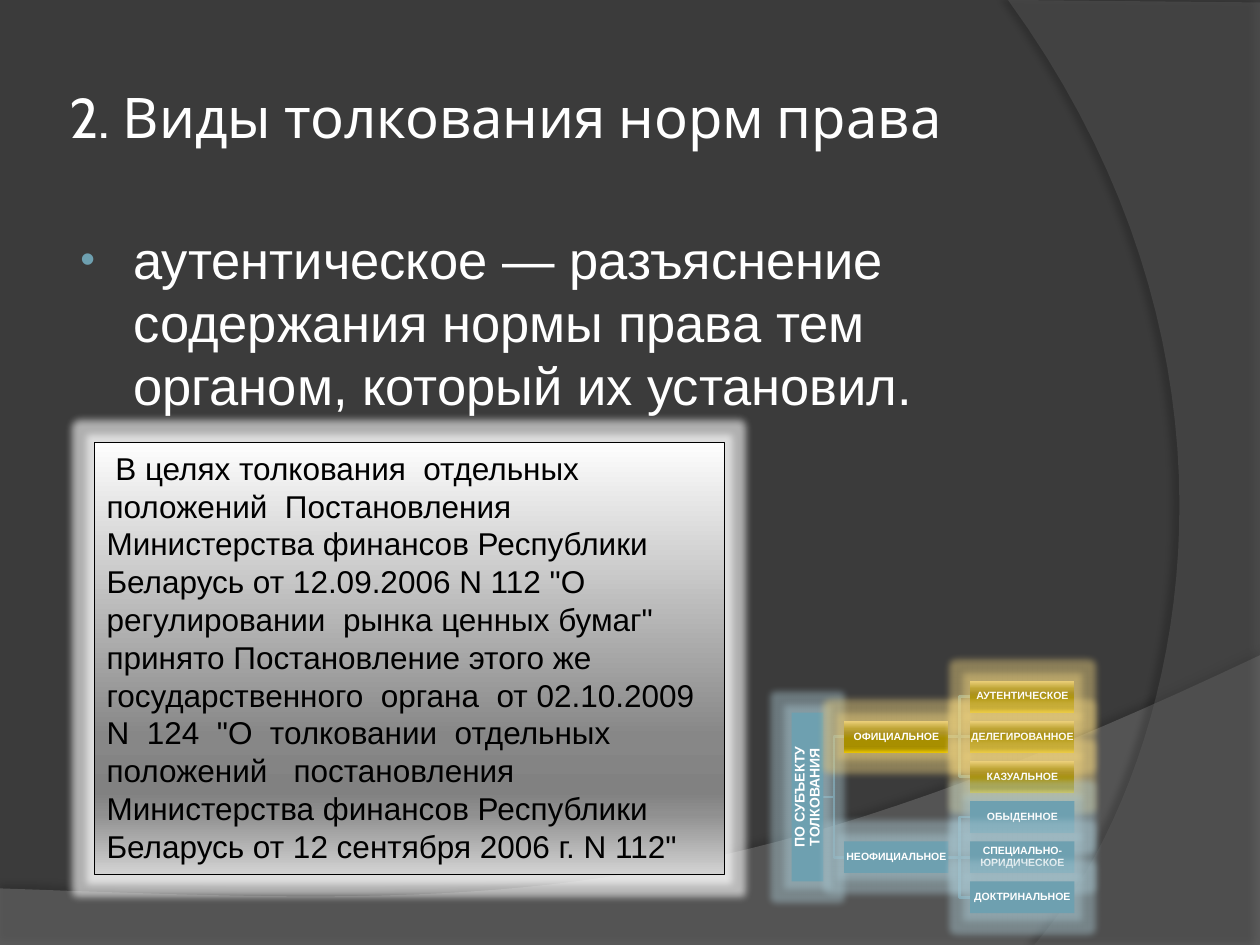
"""Builds a slide on authentic interpretation of legal norms, with a tree of its kinds."""
from lxml import etree
from pptx import Presentation
from pptx.dml.color import RGBColor
from pptx.enum.shapes import MSO_CONNECTOR, MSO_SHAPE
from pptx.enum.text import MSO_ANCHOR, PP_ALIGN
from pptx.oxml.ns import qn
from pptx.util import Cm, Pt

RECTANGLE = MSO_SHAPE.RECTANGLE
ELBOW, STRAIGHT = MSO_CONNECTOR.ELBOW, MSO_CONNECTOR.STRAIGHT
MIDDLE, TOP = MSO_ANCHOR.MIDDLE, MSO_ANCHOR.TOP
CENTER, LEFT = PP_ALIGN.CENTER, PP_ALIGN.LEFT

WHITE = RGBColor(0xFF, 0xFF, 0xFF)
BLACK = RGBColor(0x00, 0x00, 0x00)
CHARCOAL = RGBColor(0x3B, 0x3B, 0x3B)
GRAY = RGBColor(0x7F, 0x7F, 0x7F)
DARK_GRAY = RGBColor(0x5E, 0x5E, 0x5E)
BLUE = RGBColor(0x6E, 0xA0, 0xB0)
TRUNK_BLUE = RGBColor(0x58, 0x80, 0x8D)
BRANCH_BLUE = RGBColor(0x64, 0x91, 0xA0)
BLUE_GLOW = RGBColor(0xA8, 0xC6, 0xD0)
GOLD_GLOW = RGBColor(0xEE, 0xD2, 0x7E)
GOLD = [(0, "EED27E"), (25, "BFA536"), (38, "AF9527"), (55, "A88F00"),
        (80, "A68D00"), (88, "AF9500"), (100, "E6C100")]
SILVER = [(0, "FEFEFE"), (68, "878787"), (81, "818181"), (86, "909090"), (100, "D3D3D3")]

TITLE = "2. Виды толкования норм права"
DEFINITION = "аутентическое — разъяснение содержания нормы права тем органом, который их установил."
EXAMPLE = (
    " В целях толкования  отдельных  положений  Постановления  Министерства финансов "
    "Республики Беларусь от 12.09.2006 N 112 \"О  регулировании  рынка ценных бумаг\" "
    "принято Постановление этого же государственного  органа  от 02.10.2009  N  124  "
    "\"О  толковании  отдельных   положений   постановления Министерства финансов "
    "Республики Беларусь от 12 сентября 2006 г. N 112\""
)
ROOT = "ПО СУБЪЕКТУ ТОЛКОВАНИЯ"
BRANCHES = [
    ("ОФИЦИАЛЬНОЕ", GOLD, GOLD_GLOW, ["АУТЕНТИЧЕСКОЕ", "ДЕЛЕГИРОВАННОЕ", "КАЗУАЛЬНОЕ"]),
    ("НЕОФИЦИАЛЬНОЕ", BLUE, BLUE_GLOW,
     ["ОБЫДЕННОЕ", "СПЕЦИАЛЬНО-ЮРИДИЧЕСКОЕ", "ДОКТРИНАЛЬНОЕ"]),
]
BOX_WIDTH, BOX_HEIGHT, ROOT_LENGTH = 2.1, 0.64, 3.4
ROOT_CENTER, BRANCH_LEFT, LEAF_LEFT = 16.28, 17.02, 19.56
FIRST_ROW, ROW_STEP = 14.04, 0.81


def curve(start, control_a, control_b, end, steps=40):
    points = []
    for step in range(1, steps + 1):
        t = step / steps
        weights = ((1 - t) ** 3, 3 * t * (1 - t) ** 2, 3 * t ** 2 * (1 - t), t ** 3)
        corners = (start, control_a, control_b, end)
        points.append(tuple(sum(w * c[axis] for w, c in zip(weights, corners))
                            for axis in (0, 1)))
    return points


class SlideBuilder:
    def __init__(self, slide):
        self.slide = slide
        self.font = "Arial"

    def effect(self, shape, name, color, alpha, **values):
        shape.shadow.inherit = False
        effects = shape._element.spPr.find(qn("a:effectLst"))
        node = etree.SubElement(effects, qn("a:" + name),
                                {key: str(value) for key, value in values.items()})
        tint = etree.SubElement(node, qn("a:srgbClr"), val=str(color))
        etree.SubElement(tint, qn("a:alpha"), val=str(alpha * 1000))

    def paint(self, shape, fill):
        if isinstance(fill, RGBColor):
            shape.fill.solid()
            shape.fill.fore_color.rgb = fill
            return
        shape.fill.gradient()
        shape.fill.gradient_angle = 270
        stops = shape._element.spPr.find(".//" + qn("a:gsLst"))
        for stop in list(stops):
            stops.remove(stop)
        for position, color in fill:
            stop = etree.SubElement(stops, qn("a:gs"), pos=str(position * 1000))
            etree.SubElement(stop, qn("a:srgbClr"), val=color)

    def wave(self, points, color, opacity, shadow_alpha, distance, direction):
        builder = self.slide.shapes.build_freeform(Cm(points[0][0]), Cm(points[0][1]))
        builder.add_line_segments([(Cm(x), Cm(y)) for x, y in points[1:]], close=True)
        shape = builder.convert_to_shape()
        self.paint(shape, color)
        tint = shape._element.spPr.find(".//" + qn("a:srgbClr"))
        etree.SubElement(tint, qn("a:alpha"), val=str(opacity * 1000))
        shape.line.fill.background()
        self.effect(shape, "outerShdw", BLACK, shadow_alpha, blurRad=Pt(4),
                    dist=Pt(distance), dir=direction * 60000, rotWithShape=0)

    def fill_text(self, shape, text, size, color=WHITE, bold=False, font=None,
                  margins=(0.25, 0.13), anchor=TOP, **paragraph_format):
        frame = shape.text_frame
        side, edge = map(Cm, margins)
        frame_format = {"word_wrap": True, "vertical_anchor": anchor,
                        "margin_left": side, "margin_right": side,
                        "margin_top": edge, "margin_bottom": edge}
        para = frame.paragraphs[0]
        span = para.add_run()
        span.text = text
        span.font.color.rgb = color
        font_format = {"name": font or self.font, "size": Pt(size), "bold": bold}
        for target, values in ((frame, frame_format), (span.font, font_format),
                               (para, {"alignment": LEFT, **paragraph_format})):
            for name, value in values.items():
                setattr(target, name, value)
        return para

    def text(self, left, top, width, height, text, size, **style):
        box = self.slide.shapes.add_textbox(Cm(left), Cm(top), Cm(width), Cm(height))
        return self.fill_text(box, text, size, **style)

    def bullet(self, para, color):
        properties = para._p.get_or_add_pPr()
        properties.set("marL", str(Cm(1.17)))
        properties.set("indent", str(Cm(-1.07)))
        tint = etree.SubElement(properties, qn("a:buClr"))
        etree.SubElement(tint, qn("a:srgbClr"), val=str(color))
        etree.SubElement(properties, qn("a:buSzPct"), val="80000")
        etree.SubElement(properties, qn("a:buFont"), typeface=self.font)
        etree.SubElement(properties, qn("a:buChar"), char="•")

    def panel(self, left, top, width, height, fill, glow, alpha, line=None):
        shape = self.slide.shapes.add_shape(RECTANGLE, Cm(left), Cm(top), Cm(width), Cm(height))
        self.paint(shape, fill)
        if line is None:
            shape.line.fill.background()
        else:
            shape.line.color.rgb = line
            shape.line.width = Pt(0.75)
        self.effect(shape, "glow", glow, alpha, rad=Pt(8))
        return shape

    def node(self, center_x, center_y, text, fill, glow, width=BOX_WIDTH, size=6, rotation=0):
        shape = self.panel(center_x - width / 2, center_y - BOX_HEIGHT / 2,
                           width, BOX_HEIGHT, fill, glow, 45)
        shape.rotation = rotation
        self.fill_text(shape, text, size, bold=True, margins=(0, 0), anchor=MIDDLE,
                       alignment=CENTER, line_spacing=0.9)

    def link(self, start_x, start_y, end_x, end_y, color):
        kind = STRAIGHT if start_y == end_y else ELBOW
        connector = self.slide.shapes.add_connector(
            kind, Cm(start_x), Cm(start_y), Cm(end_x), Cm(end_y))
        connector.line.color.rgb = color
        connector.line.width = Pt(1.5)
        etree.SubElement(connector._element.spPr, qn("a:effectLst"))

    def tree(self):
        rows = [FIRST_ROW + ROW_STEP * index for index in range(6)]
        root_y = (rows[0] + rows[-1]) / 2
        groups = [(branch, rows[3 * index:3 * index + 3])
                  for index, branch in enumerate(BRANCHES)]
        for _, leaf_rows in groups:
            self.link(ROOT_CENTER + BOX_HEIGHT / 2, root_y, BRANCH_LEFT, leaf_rows[1], TRUNK_BLUE)
            for row in leaf_rows:
                self.link(BRANCH_LEFT + BOX_WIDTH, leaf_rows[1], LEAF_LEFT, row, BRANCH_BLUE)
        self.node(ROOT_CENTER, root_y, ROOT, BLUE, BLUE_GLOW, ROOT_LENGTH, 8, 270)
        for (name, fill, glow, leaves), leaf_rows in groups:
            self.node(BRANCH_LEFT + BOX_WIDTH / 2, leaf_rows[1], name, fill, glow)
            for leaf, row in zip(leaves, leaf_rows):
                self.node(LEAF_LEFT + BOX_WIDTH / 2, row, leaf, fill, glow)


def main():
    deck = Presentation()
    deck.slide_width, deck.slide_height = Cm(25.4), Cm(19.05)
    page = deck.slides.add_slide(deck.slide_layouts[6])
    page.background.fill.solid()
    page.background.fill.fore_color.rgb = CHARCOAL
    builder = SlideBuilder(page)

    floor = curve((25.4, 13.21), (14.2, 18.52), (9.93, 18.26), (0, 17.91))
    builder.wave([(0, 19.05), (25.4, 19.05), (25.4, 13.21)] + floor, GRAY, 45, 35, 3.5, 270)
    side = curve((20.85, 19.05), (23.75, 15.72), (25.86, 7.62), (20.32, 0))
    builder.wave([(25.4, 0.05), (25.4, 19.05), (20.85, 19.05)] + side, DARK_GRAY, 40, 45, 4, 180)

    builder.text(1.27, 0.76, 20.75, 3.18, TITLE, 32, font="Cabin",
                 margins=(0.13, 0.13), anchor=MIDDLE)
    definition = builder.text(1.27, 4.45, 17.42, 9.07, DEFINITION, 30, space_before=Pt(6))
    builder.bullet(definition, BLUE)
    builder.tree()
    example = builder.panel(1.9, 8.92, 12.7, 8.71, SILVER, WHITE, 60, BLACK)
    builder.fill_text(example, EXAMPLE, 18, color=BLACK)
    deck.save("out.pptx")


if __name__ == "__main__":
    main()
